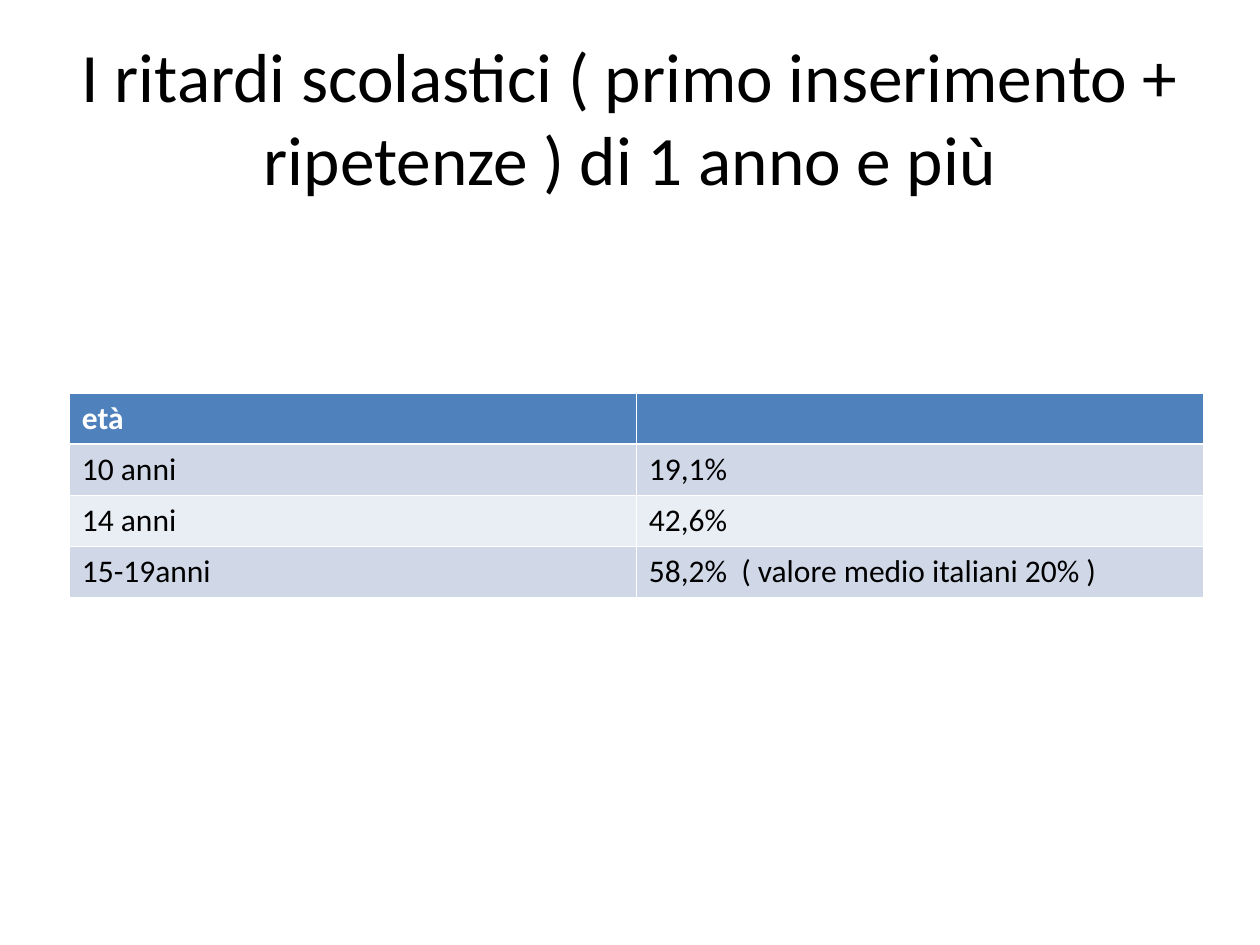
from pptx import Presentation
from pptx.dml.color import RGBColor
from pptx.enum import text
from pptx.util import Inches, Pt

TITLE = "I ritardi scolastici ( primo inserimento + ripetenze ) di 1 anno e più"
ROWS = [
    ("età", ""),
    ("10 anni", "19,1%"),
    ("14 anni", "42,6%"),
    ("15-19anni", "58,2%  ( valore medio italiani 20% )"),
]

FONT = "Calibri"
BLACK = RGBColor(0x00, 0x00, 0x00)
WHITE = RGBColor(0xFF, 0xFF, 0xFF)
HEADER_FILL = RGBColor(0x4F, 0x81, 0xBD)
BAND_FILLS = [RGBColor(0xE9, 0xED, 0xF4), RGBColor(0xD0, 0xD8, 0xE8)]
COL_WIDTH, ROW_HEIGHT = 4.5, 0.405


def write(tf, content, size=18, color=BLACK, bold=False, align=None):
    p = tf.paragraphs[0]
    p.alignment = align
    p.font.size = Pt(size)
    if content:
        r = p.add_run()
        r.text = content
        r.font.name = FONT
        r.font.size = Pt(size)
        r.font.bold = bold
        r.font.color.rgb = color


def add_title(s):
    sp = s.shapes.title
    sp.left, sp.top = Inches(0.5), Inches(0.3)
    sp.width, sp.height = Inches(9), Inches(1.25)
    tf = sp.text_frame
    tf.word_wrap = True
    tf.vertical_anchor = text.MSO_ANCHOR.MIDDLE
    write(tf, TITLE, size=39.6, align=text.PP_ALIGN.CENTER)


def add_delay_table(s):
    n_rows, n_cols = len(ROWS), len(ROWS[0])
    table = s.shapes.add_table(
        n_rows, n_cols, Inches(0.55), Inches(3.12),
        Inches(COL_WIDTH * n_cols), Inches(ROW_HEIGHT * n_rows)).table
    for i, row in enumerate(ROWS):
        header = i == 0
        for j, content in enumerate(row):
            cell = table.cell(i, j)
            cell.fill.solid()
            cell.fill.fore_color.rgb = HEADER_FILL if header else BAND_FILLS[i % 2]
            write(cell.text_frame, content, bold=header,
                  color=WHITE if header else BLACK)


def main():
    prs = Presentation()
    prs.slide_width, prs.slide_height = Inches(10), Inches(7.5)
    s = prs.slides.add_slide(prs.slide_layouts.get_by_name("Title Only"))
    add_title(s)
    add_delay_table(s)
    prs.save("out.pptx")


if __name__ == "__main__":
    main()
